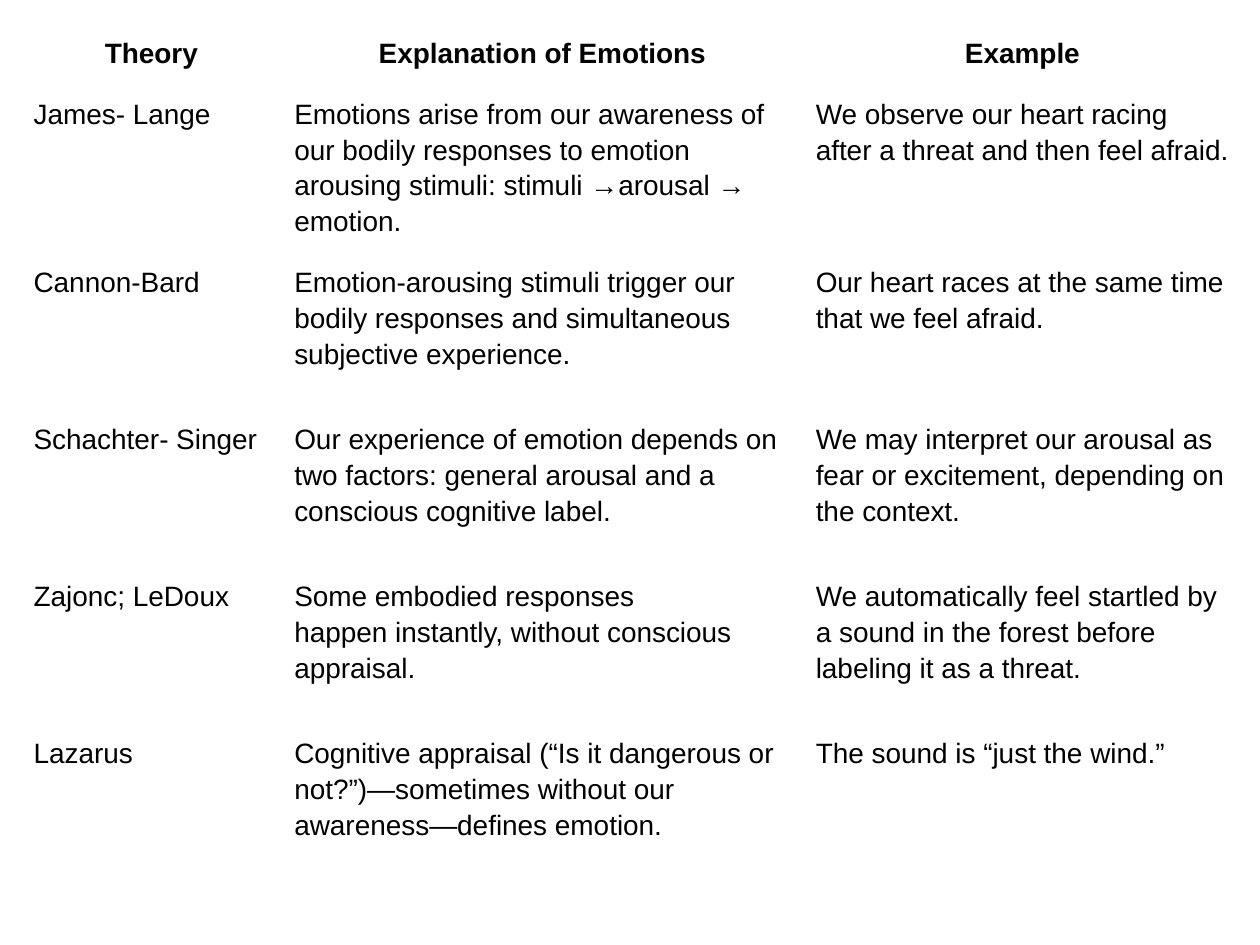
"""Build a slide with a table of theories of emotion."""
from pptx import Presentation
from pptx.dml.color import RGBColor
from pptx.enum.text import PP_ALIGN
from pptx.util import Pt

BLACK = RGBColor(0, 0, 0)
FONT = {"name": "Arial", "size": Pt(16)}
INSET = {"margin_left": Pt(7.2), "margin_right": Pt(7.2),
         "margin_top": Pt(7.2), "margin_bottom": Pt(7.2)}
PLAIN = {"first_row": False, "horz_banding": False}
WIDTHS = [149, 298, 250.6]
HEAD, BODY = 31.7, 89.75
ROWS = [
    ("Theory", "Explanation of Emotions", "Example"),
    ("James- Lange",
     "Emotions arise from our awareness of our bodily responses to emotion "
     "arousing stimuli: stimuli →arousal → emotion.",
     "We observe our heart racing after a threat and then feel afraid."),
    ("Cannon-Bard",
     "Emotion-arousing stimuli trigger our bodily responses and simultaneous "
     "subjective experience.",
     "Our heart races at the same time that we feel afraid."),
    ("Schachter- Singer",
     "Our experience of emotion depends on two factors: general arousal and a "
     "conscious cognitive label.",
     "We may interpret our arousal as fear or excitement, depending on the context."),
    ("Zajonc; LeDoux",
     "Some embodied responses\nhappen instantly, without conscious appraisal.",
     "We automatically feel startled by a sound in the forest before labeling "
     "it as a threat."),
    ("Lazarus",
     "Cognitive appraisal (“Is it dangerous or not?”)—sometimes without our "
     "awareness—defines emotion.",
     "The sound is “just the wind.”"),
]


def put(item, values):
    for key, value in values.items():
        setattr(item, key, value)


deck = Presentation()
put(deck, {"slide_width": Pt(720), "slide_height": Pt(540)})
slide = deck.slides.add_slide(deck.slide_layouts[6])
heights = [HEAD] + [BODY] * (len(ROWS) - 1)
table = slide.shapes.add_table(len(ROWS), len(WIDTHS), Pt(12), Pt(12),
                               Pt(sum(WIDTHS)), Pt(sum(heights))).table
put(table, PLAIN)
for col, width in zip(table.columns, WIDTHS):
    col.width = Pt(width)

for r, (texts, height) in enumerate(zip(ROWS, heights)):
    table.rows[r].height = Pt(height)
    side = PP_ALIGN.LEFT if r else PP_ALIGN.CENTER
    for c, text in enumerate(texts):
        cell = table.cell(r, c)
        put(cell, INSET)
        cell.fill.background()
        cell.text_frame.text = text
        for para in cell.text_frame.paragraphs:
            put(para, {"alignment": side, "line_spacing": 1.15})
            for run in para.runs:
                put(run.font, FONT | {"bold": r == 0})
                run.font.color.rgb = BLACK

deck.save("out.pptx")
